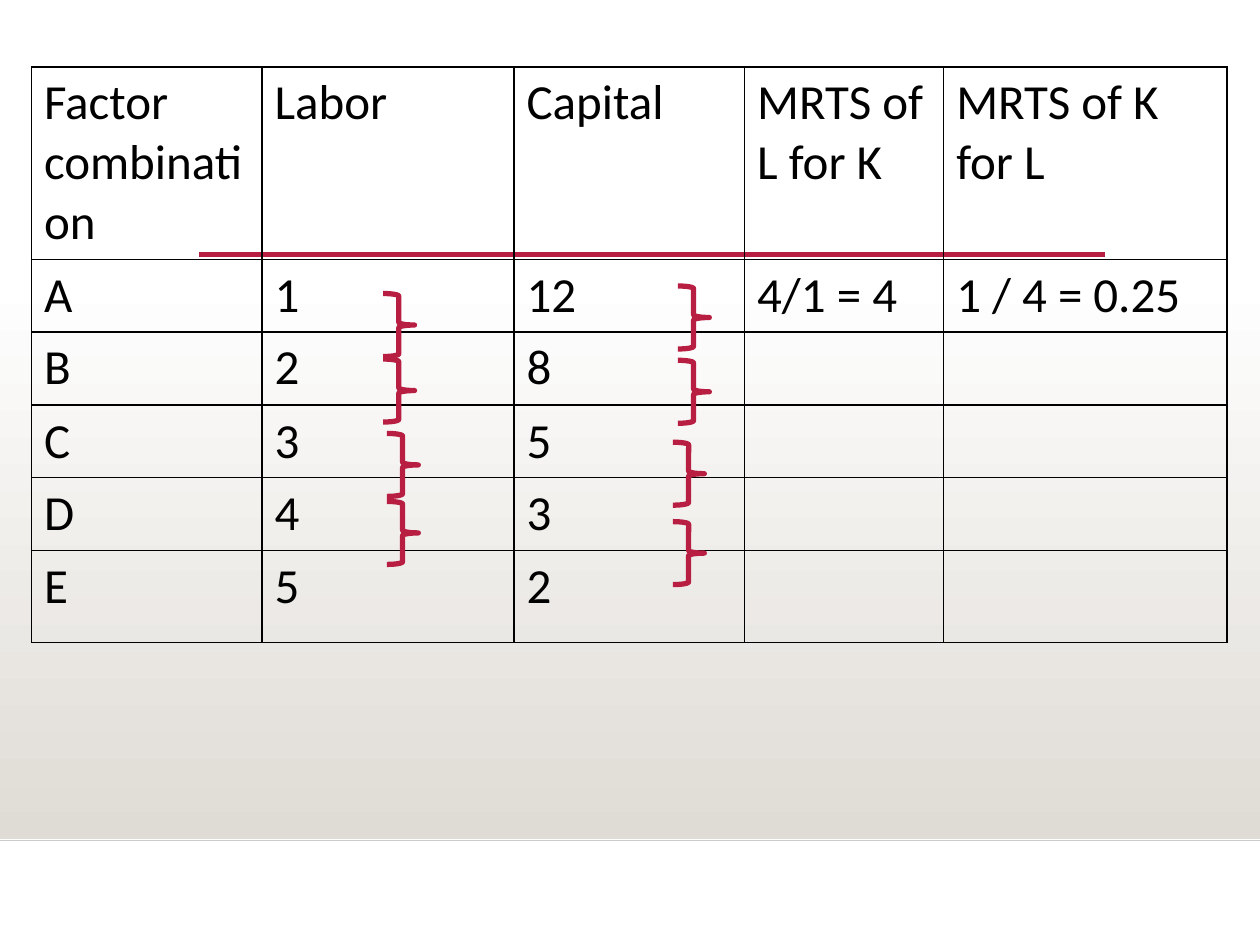
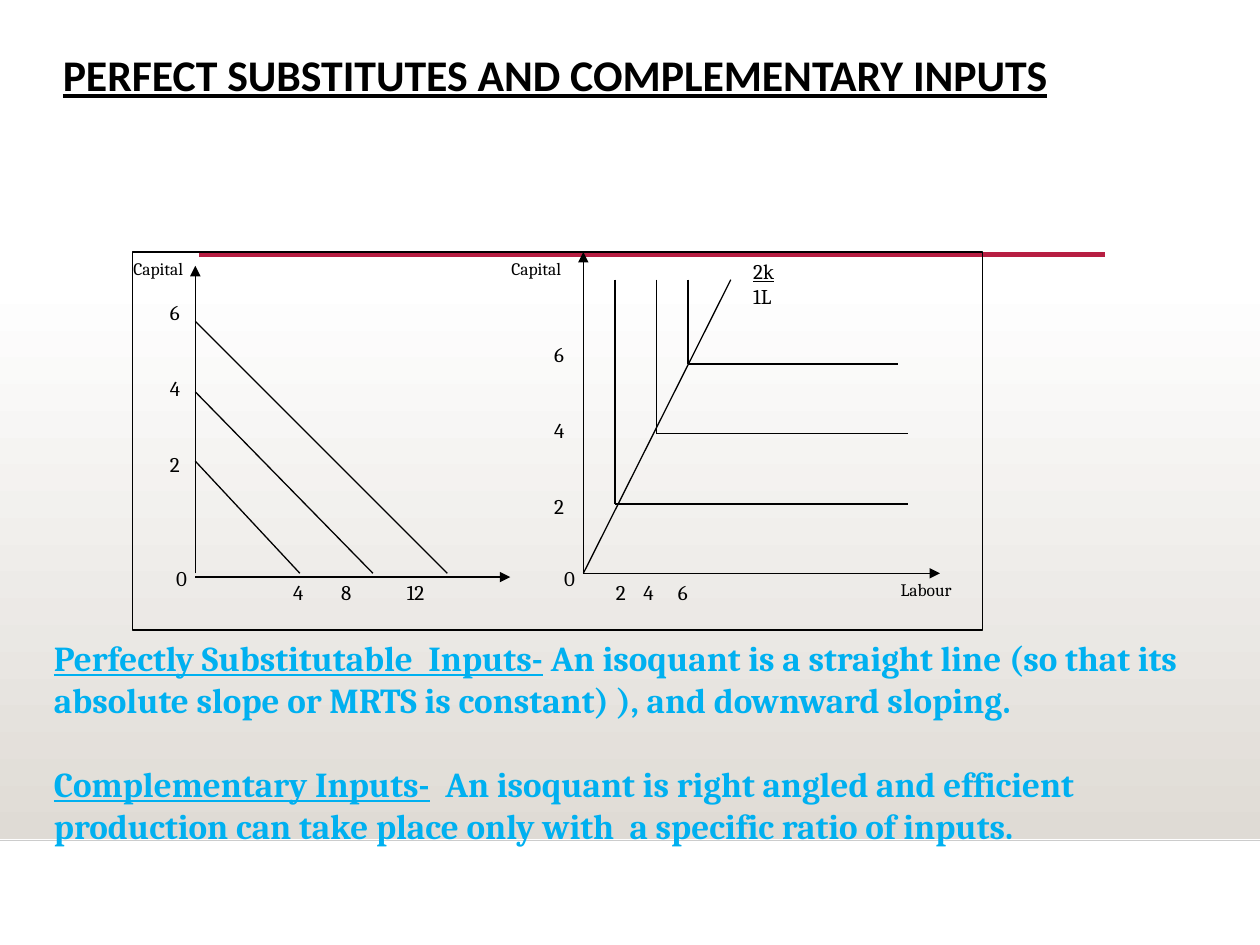
"""Build two slides on factor substitution and isoquants."""
from dataclasses import dataclass
from lxml.etree import SubElement
from pptx import Presentation
from pptx.dml.color import RGBColor
from pptx.enum.shapes import MSO_CONNECTOR, MSO_SHAPE
from pptx.oxml.ns import qn
from pptx.util import Inches, Pt


@dataclass(frozen=True)
class Theme:
    black: str = "000000"
    white: str = "FFFFFF"
    sand: str = "DFDBD5"
    edge: str = "CCCCCC"
    red: str = "B71E42"
    blue: str = "00B0F0"
    sans: str = "Calibri"
    serif: str = "Cambria"
    grid: int = 28
    title: int = 25
    body: int = 20
    label: int = 12
    small: int = 10


T = Theme()

ROWS = [
    ("Factor combination", "Labor", "Capital", "MRTS of L for K", "MRTS of K for L"),
    ("A", "1", "12", "4/1 = 4", "1 / 4 = 0.25"),
    ("B", "2", "8", "", ""),
    ("C", "3", "5", "", ""),
    ("D", "4", "3", "", ""),
    ("E", "5", "2", "", ""),
]
WIDTHS = [1.83, 2, 1.83, 1.58, 2.25]
HEIGHTS = [1.53, 0.57, 0.58, 0.57, 0.58, 0.73]
BRACES = [(5.38, 2.27), (5.38, 2.86), (5.34, 3.51), (5.34, 4.14),
          (3.04, 2.33), (3.04, 2.85), (3.07, 3.44), (3.07, 3.98)]

TITLE = "PERFECT SUBSTITUTES AND COMPLEMENTARY INPUTS"
NOTES = [
    [("Perfectly Substitutable  Inputs-", True),
     (" An isoquant is a straight line (so that its absolute slope or MRTS is "
      "constant) ), and downward sloping.", False)],
    [("Complementary Inputs-", True),
     ("  An isoquant is right angled and efficient production can take place "
      "only with  a specific ratio of inputs.", False)],
]
LEFT, RIGHT, BASE, TOP = 1.55, 4.63, 4.55, 2.22
AXES = [(LEFT, BASE, LEFT, 2.11), (LEFT, 4.58, 4.05, 4.58),
        (RIGHT, BASE, RIGHT, 2), (RIGHT, BASE, 7.46, BASE)]
SLOPES = [(3.66, 2.38), (3.11, 2.96), (2.55, 3.55)]
BENDS = [(4.88, 4, 7.21), (5.21, 3.44, 7.21), (5.46, 2.89, 7.13)]
NAMES = [("Capital", 0.96, 2), ("Capital", 3.96, 2), ("Labour", 7.05, BASE)]
ZEROS = [1.3, 4.38]
LEVELS = [(1.25, 2.33), (4.3, 2.66)]
TICKS = [(2.13, [("4", 0.14), ("8", 0.52), ("12", 1.07)]),
         (4.7, [("2", 0.13), ("4", 0.35), ("6", 0.62)])]


def color(code):
    return RGBColor.from_string(code)


def write(para, text, size, font, shade=T.black, bold=False, under=False):
    run = para.add_run()
    run.text = text
    face = run.font
    face.size, face.name = Pt(size), font
    face.bold, face.underline = bold, under
    face.color.rgb = color(shade)


def put(slide, box, paras, size, font=T.serif, shade=T.black, bold=False, gap=0):
    frame = slide.shapes.add_textbox(*map(Inches, box)).text_frame
    frame.word_wrap = True
    for i, runs in enumerate(paras):
        para = frame.add_paragraph() if i else frame.paragraphs[0]
        if i:
            para.space_before = Pt(gap)
        for text, under in runs:
            write(para, text, size, font, shade, bold, under)
    return frame


def draw(slide, ends, shade=T.black, width=0.75, arrow=False):
    line = slide.shapes.add_connector(MSO_CONNECTOR.STRAIGHT, *map(Inches, ends))
    line.line.color.rgb = color(shade)
    line.line.width = Pt(width)
    props = line._element.spPr
    if arrow:
        SubElement(props.find(qn("a:ln")), qn("a:tailEnd"), type="triangle")
    SubElement(props, qn("a:effectLst"))


def shape(slide, kind, box, shade=None, width=0.75):
    item = slide.shapes.add_shape(kind, *map(Inches, box))
    item.shadow.inherit = False
    item.fill.background()
    if shade:
        item.line.color.rgb = color(shade)
        item.line.width = Pt(width)
    else:
        item.line.fill.background()
    return item


def start(deck):
    slide = deck.slides.add_slide(deck.slide_layouts[6])
    fill = shape(slide, MSO_SHAPE.RECTANGLE, (0, 2.2, 10, 4.46)).fill
    fill.gradient()
    fill.gradient_angle = 270
    for stop, shade, place in zip(fill.gradient_stops, (T.white, T.sand), (0, 1)):
        stop.color.rgb = color(shade)
        stop.position = place
    draw(slide, (0, 6.67, 10, 6.67), T.edge, 1)
    draw(slide, (1.58, 2.02, 8.77, 2.02), T.red, 2.5)
    return slide


def border(cell):
    props = cell._tc.get_or_add_tcPr()
    for i, side in enumerate(("lnL", "lnR", "lnT", "lnB")):
        line = props.makeelement(qn(f"a:{side}"), {"w": str(Pt(1))})
        fill = SubElement(line, qn("a:solidFill"))
        SubElement(fill, qn("a:srgbClr"), val=T.black)
        props.insert(i, line)


def factors(deck):
    slide = start(deck)
    box = (0.25, 0.53, sum(WIDTHS), sum(HEIGHTS))
    table = slide.shapes.add_table(len(ROWS), len(WIDTHS), *map(Inches, box)).table
    table.first_row = table.horz_banding = False
    for col, width in zip(table.columns, WIDTHS):
        col.width = Inches(width)
    for row, height, texts in zip(table.rows, HEIGHTS, ROWS):
        row.height = Inches(height)
        for cell, text in zip(row.cells, texts):
            cell.fill.background()
            border(cell)
            para = cell.text_frame.paragraphs[0]
            if text:
                write(para, text, T.grid, T.sans)
            else:
                para.font.size = Pt(T.grid)
    for x, y in BRACES:
        shape(slide, MSO_SHAPE.RIGHT_BRACE, (x, y, 0.25, 0.5), T.red, 3)


def inputs(deck):
    slide = start(deck)
    put(slide, (0.4, 0.33, 9.33, 0.83), [[(TITLE, True)]], T.title, T.sans, bold=True)
    for ends in AXES:
        draw(slide, ends, arrow=True)
    for y, x in SLOPES:
        draw(slide, (LEFT, y, x, BASE))
    for x, y, end in BENDS:
        draw(slide, (x, TOP, x, y))
        draw(slide, (x, y, end, y))
    draw(slide, (RIGHT, BASE, 5.8, TOP))
    for name, x, y in NAMES:
        put(slide, (x, y, 0.67, 0.33), [[(name, False)]], T.small)
    for x in ZEROS:
        put(slide, (x, 4.44, 0.33, 0.33), [[("0", False)]], T.label)
    for x, y in LEVELS:
        put(slide, (x, y, 0.42, 1.56), [[(n, False)] for n in "642"], T.label, gap=29)
    for x, marks in TICKS:
        text = "".join("\t" + mark for mark, _ in marks)
        frame = put(slide, (x, BASE, 1.83, 0.33), [[(text, False)]], T.label)
        tabs = SubElement(frame.paragraphs[0]._p.get_or_add_pPr(), qn("a:tabLst"))
        for _, place in marks:
            SubElement(tabs, qn("a:tab"), pos=str(Inches(place)), algn="ctr")
    put(slide, (5.88, 2, 0.67, 0.44), [[("2k", True)], [("1L", False)]], T.label)
    shape(slide, MSO_SHAPE.RECTANGLE, (1.05, 2, 6.75, 3), T.black)
    put(slide, (0.33, 5, 9.42, 2.46), NOTES, T.body, shade=T.blue, bold=True, gap=24)


def main():
    deck = Presentation()
    deck.slide_width, deck.slide_height = Inches(10), Inches(7.5)
    factors(deck)
    inputs(deck)
    deck.save("out.pptx")


if __name__ == "__main__":
    main()
